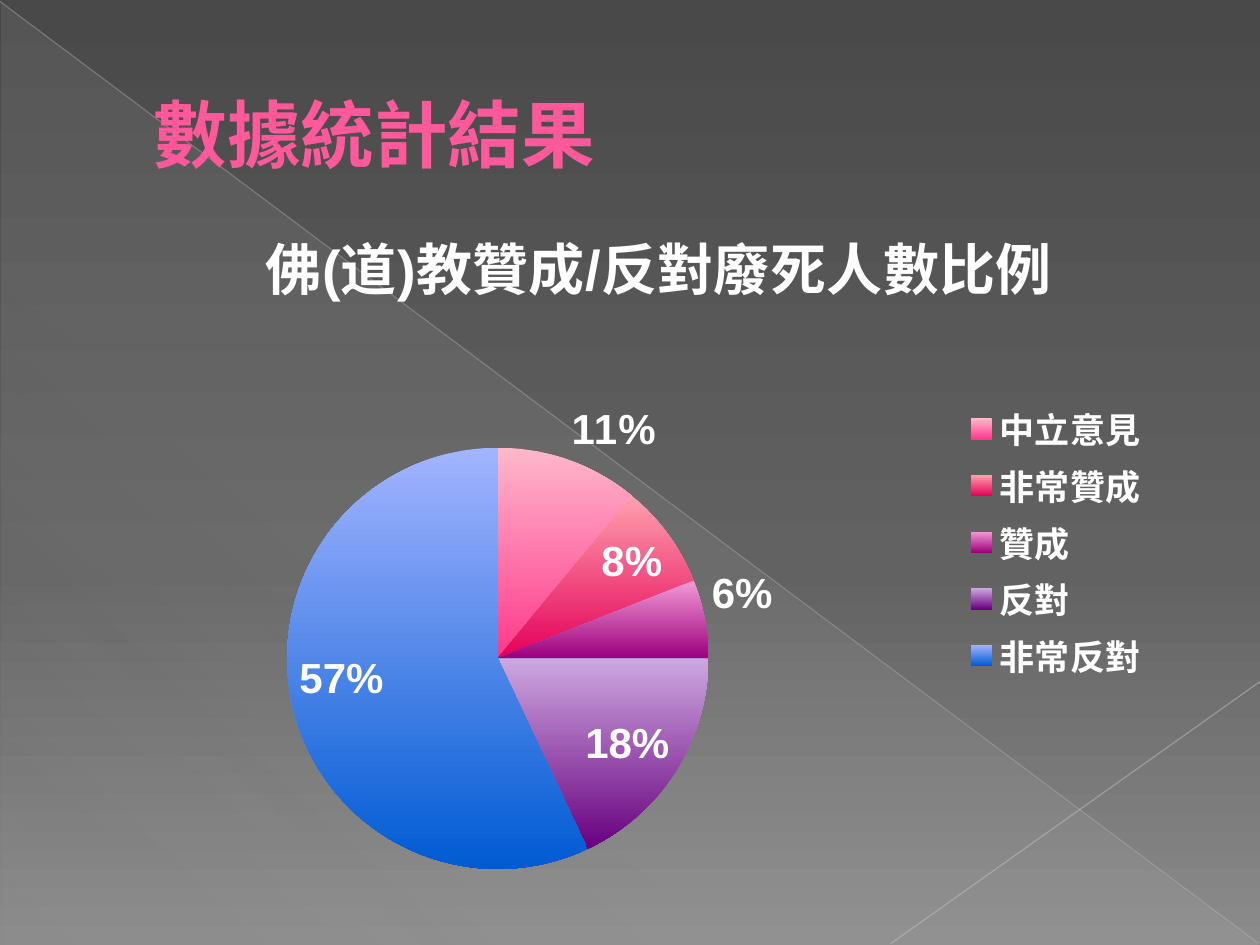
from dataclasses import dataclass

from lxml import etree
from pptx import Presentation
from pptx.chart.data import CategoryChartData
from pptx.dml.color import RGBColor
from pptx.enum.chart import XL_CHART_TYPE, XL_LABEL_POSITION, XL_LEGEND_POSITION
from pptx.enum.shapes import MSO_CONNECTOR, MSO_SHAPE
from pptx.enum.text import MSO_ANCHOR
from pptx.oxml.ns import qn
from pptx.util import Cm, Pt

PIE = XL_CHART_TYPE.PIE
OUTSIDE = XL_LABEL_POSITION.OUTSIDE_END
INSIDE = XL_LABEL_POSITION.INSIDE_END
RIGHT = XL_LEGEND_POSITION.RIGHT
STRAIGHT = MSO_CONNECTOR.STRAIGHT
TRIANGLE = MSO_SHAPE.RIGHT_TRIANGLE
MIDDLE = MSO_ANCHOR.MIDDLE


@dataclass(frozen=True)
class Theme:
    heading_font: str = "TeX Gyre Adventor"
    chart_font: str = "Arial"
    heading: str = "FF599C"
    text: str = "FFFFFF"
    heading_size: int = 42
    chart_title_size: int = 32
    label_size: int = 24
    legend_size: int = 20
    backdrop: tuple = ((0, "494949", 100), (60, "626262", 100), (100, "8B8B8B", 100))
    sheen: tuple = ((0, "D2D2D2", 10), (70, "D2D2D2", 8), (100, "D2D2D2", 1))
    long_line: str = "BEBEBE"
    short_line: str = "C5C5C5"


THEME = Theme()

OPINIONS = (
    ("中立意見", 11, "FFB8CC", "FF388C", OUTSIDE),
    ("非常贊成", 8, "FFA0AD", "E40059", INSIDE),
    ("贊成", 6, "F39AD4", "9C007F", OUTSIDE),
    ("反對", 18, "CDA8E0", "68007F", INSIDE),
    ("非常反對", 57, "A3B4FF", "005BD3", INSIDE),
)


def style_font(font, name, size, color):
    font.name = name
    font.size = Pt(size)
    font.bold = True
    font.color.rgb = RGBColor.from_string(color)


def add_alpha(color_element, percent):
    etree.SubElement(color_element, qn("a:alpha"), val=str(percent * 1000))


def paint_gradient(fill, owner, stops, angle):
    fill.gradient()
    fill.gradient_angle = 360 - angle
    stop_list = next(owner.iter(qn("a:gsLst")))
    for old_stop in list(stop_list):
        stop_list.remove(old_stop)
    for position, color, opacity in stops:
        stop = etree.SubElement(stop_list, qn("a:gs"), pos=str(position * 1000))
        add_alpha(etree.SubElement(stop, qn("a:srgbClr"), val=color), opacity)


def add_thin_line(slide, start, end, color, opacity):
    thin_line = slide.shapes.add_connector(
        STRAIGHT, *(Cm(value) for value in (*start, *end)))
    thin_line.line.width = Pt(0.75)
    thin_line.line.color.rgb = RGBColor.from_string(color)
    properties = thin_line.element.spPr
    add_alpha(next(properties.iter(qn("a:srgbClr"))), opacity)
    etree.SubElement(properties, qn("a:effectLst"))


def build_backdrop(slide, left, top, width, height):
    paint_gradient(slide.background.fill, slide.element, THEME.backdrop, 90)
    sheen = slide.shapes.add_shape(
        TRIANGLE, Cm(left + 0.03), Cm(top + 0.05), Cm(width - 0.05), Cm(height - 0.05))
    sheen.shadow.inherit = False
    sheen.line.fill.background()
    paint_gradient(sheen.fill, sheen.element, THEME.sheen, 133)
    right, bottom = left + width, top + height - 0.03
    add_thin_line(slide, (left, top + 0.03), (right - 0.03, bottom), THEME.long_line, 35)
    add_thin_line(slide, (right, top + 13.74), (right - 7.44, bottom), THEME.short_line, 45)


def place_in_chart(part, index, inner=False, **fractions):
    for old_layout in part.findall(qn("c:layout")):
        part.remove(old_layout)
    layout = etree.Element(qn("c:layout"))
    manual = etree.SubElement(layout, qn("c:manualLayout"))
    if inner:
        etree.SubElement(manual, qn("c:layoutTarget"), val="inner")
    for mode in ("xMode", "yMode"):
        etree.SubElement(manual, qn(f"c:{mode}"), val="edge")
    for key, fraction in fractions.items():
        etree.SubElement(manual, qn(f"c:{key}"), val=str(fraction))
    part.insert(index, layout)


def style_slices(plot):
    plot.vary_by_categories = True
    points = plot.series[0].points
    for index, (_, _, light, dark, position) in enumerate(OPINIONS):
        fill = points[index].format.fill
        fill.gradient()
        fill.gradient_angle = 270
        for stop, color in zip(fill.gradient_stops, (light, dark)):
            stop.color.rgb = RGBColor.from_string(color)
        points[index].format.line.fill.background()
        label = points[index].data_label
        style_font(label.font, THEME.chart_font, THEME.label_size, THEME.text)
        label.position = position


def show_percentages(chart):
    for label in chart.element.iter(qn("c:dLbl")):
        label.find(qn("c:showVal")).set("val", "0")
        label.find(qn("c:showPercent")).set("val", "1")


def build_opinion_chart(slide, left, top, width, height):
    opinion_data = CategoryChartData()
    opinion_data.categories = [opinion[0] for opinion in OPINIONS]
    opinion_data.add_series("Series 1", [opinion[1] for opinion in OPINIONS])
    chart = slide.shapes.add_chart(
        PIE, Cm(left), Cm(top), Cm(width), Cm(height), opinion_data).chart
    chart.font.name = THEME.chart_font
    chart.font.size = Pt(18)

    chart.has_title = True
    chart_title = chart.chart_title.text_frame
    chart_title.text = "佛(道)教贊成/反對廢死人數比例"
    style_font(chart_title.paragraphs[0].runs[0].font,
               THEME.chart_font, THEME.chart_title_size, THEME.text)

    chart.has_legend = True
    chart.legend.position = RIGHT
    chart.legend.include_in_layout = False
    style_font(chart.legend.font, THEME.chart_font, THEME.legend_size, THEME.text)

    style_slices(chart.plots[0])
    show_percentages(chart)
    place_in_chart(chart.chart_title.element if hasattr(chart.chart_title, "element")
                   else next(chart.element.iter(qn("c:title"))), 1, x=0.14, y=0.03)
    place_in_chart(chart.legend.element if hasattr(chart.legend, "element")
                   else next(chart.element.iter(qn("c:legend"))), 1,
                   x=0.81, y=0.3, w=0.18, h=0.41)
    place_in_chart(next(chart.element.iter(qn("c:plotArea"))), 0, inner=True,
                   x=0.17, y=0.37, w=0.4, h=0.6)


def build_heading(slide, left, top, width, height):
    heading = slide.shapes.add_textbox(Cm(left), Cm(top), Cm(width), Cm(height)).text_frame
    heading.word_wrap = True
    heading.vertical_anchor = MIDDLE
    heading.margin_left = heading.margin_right = Cm(0.25)
    heading.margin_top = heading.margin_bottom = Cm(0.25)
    heading.text = "數據統計結果"
    paragraph = heading.paragraphs[0]
    paragraph.runs[0].font.language_id = None
    style_font(paragraph.runs[0].font, THEME.heading_font, THEME.heading_size, THEME.heading)
    paragraph._p.get_or_add_pPr().set("marL", str(Cm(1.35)))


def main():
    deck = Presentation()
    deck.slide_width, deck.slide_height = Cm(25.4), Cm(19.05)
    slide = deck.slides.add_slide(deck.slide_layouts[6])
    build_backdrop(slide, 0, 0, 25.4, 19.05)
    build_opinion_chart(slide, 2.18, 3.76, 21.23, 14.2)
    build_heading(slide, 1.5, 0.74, 22.86, 3.89)
    deck.save("out.pptx")


if __name__ == "__main__":
    main()
